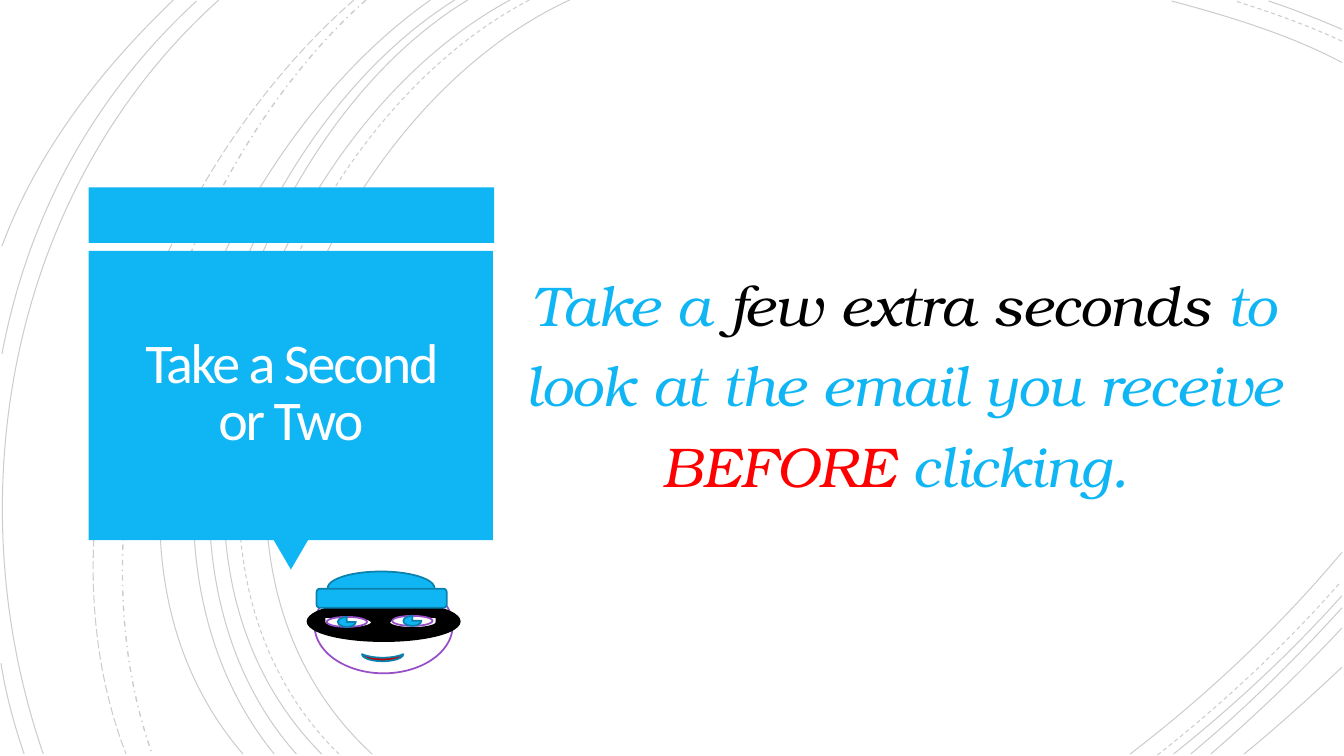
from typing import NamedTuple, Optional

from lxml.etree import SubElement
from pptx import Presentation
from pptx.dml.color import RGBColor
from pptx.enum.dml import MSO_LINE_DASH_STYLE as Dash
from pptx.enum.shapes import MSO_SHAPE as Preset
from pptx.enum.text import MSO_ANCHOR as Anchor, PP_ALIGN as Align
from pptx.oxml.ns import qn
from pptx.util import Cm, Length, Pt

BLUE, DARK_BLUE, PURPLE = "10B6F4", "0B81AD", "984EC7"
BLACK, WHITE, RED = "000000", "FFFFFF", "FF0000"


class Arc(NamedTuple):
    """A cubic curve: start, two control points and end, in inches."""
    points: tuple[float, ...]
    dash: Dash = Dash.SOLID
    weight: float = 0.75


class Part(NamedTuple):
    preset: Preset
    box: tuple[float, float, float, float]
    fill: str
    outline: Optional[str] = None
    rotation: float = 0
    mirrored: bool = False


class Phrase(NamedTuple):
    text: str
    colour: str


ARCS = [
    Arc((5.65, 0, 3.15, 1.15, 1.43, 5.4, 3.69, 7.48)),
    Arc((13.31, 0.62, 12.78, 0.34, 12.18, 0.16, 11.62, 0.01)),
    Arc((11.21, 7.48, 11.97, 6.9, 12.69, 6.22, 13.31, 5.48)),
    Arc((5.25, 0, 2.85, 1.25, 1.23, 5.37, 3.36, 7.48), Dash.DASH),
    Arc((13.31, 0.41, 12.97, 0.25, 12.6, 0.12, 12.25, 0.01), Dash.DASH),
    Arc((11.48, 7.49, 12.13, 6.98, 12.75, 6.4, 13.3, 5.77), Dash.DASH),
    Arc((5.06, 0, 2.7, 1.27, 1.1, 5.37, 3.19, 7.48)),
    Arc((13.31, 0.29, 13.07, 0.19, 12.83, 0.09, 12.58, 0.01)),
    Arc((11.64, 7.48, 12.23, 7.01, 12.8, 6.48, 13.31, 5.91)),
    Arc((4.64, 0, 2.44, 1.33, 1.1, 5.41, 2.94, 7.48)),
    Arc((11.81, 7.48, 12.34, 7.04, 12.84, 6.55, 13.31, 6.03)),
    Arc((4.51, 0, 2.31, 1.38, 0.97, 5.33, 2.72, 7.48)),
    Arc((12.01, 7.48, 12.46, 7.09, 12.9, 6.67, 13.31, 6.23)),
    Arc((4.27, 0, 2.17, 1.47, 0.53, 5.29, 2.41, 7.48)),
    Arc((12.34, 7.48, 12.67, 7.21, 12.99, 6.92, 13.31, 6.62)),
    Arc((3.63, 0, 1.76, 1.66, 0.65, 5.09, 1.51, 7.48), Dash.DASH_DOT, 1),
    Arc((3.51, 0, 1.57, 1.69, 0.29, 4.99, 1.25, 7.48), Dash.LONG_DASH),
    Arc((2.17, 0, 0.11, 1.85, -0.46, 4.9, 0.43, 7.48)),
    Arc((1.95, 0.01, 0.92, 0.96, 0.28, 2.14, 0.02, 3.51)),
    Arc((0.01, 6.58, 0.06, 6.89, 0.14, 7.19, 0.24, 7.48)),
    Arc((1.72, 0, 1, 0.69, 0.37, 1.5, 0.02, 2.44)),
]

CALLOUT = [
    Part(Preset.RECTANGLE, (0.88, 1.86, 4.02, 0.55), BLUE),
    Part(Preset.ISOSCELES_TRIANGLE, (2.71, 5.35, 0.35, 0.3), BLUE, rotation=180),
    Part(Preset.RECTANGLE, (0.88, 2.49, 4.01, 2.87), BLUE),
]

THIEF = [
    Part(Preset.OVAL, (3.12, 5.73, 1.37, 0.95), WHITE, PURPLE),
    Part(Preset.OVAL, (3.05, 5.97, 1.51, 0.39), BLACK, BLACK),
    Part(Preset.TEAR, (3.86, 6.12, 0.47, 0.11), WHITE, BLACK),
    Part(Preset.TEAR, (3.22, 6.12, 0.47, 0.11), WHITE, BLACK, mirrored=True),
    Part(Preset.OVAL, (3.25, 5.67, 1.06, 0.33), BLUE, DARK_BLUE),
    Part(Preset.ROUNDED_RECTANGLE, (3.14, 5.84, 1.29, 0.19), BLUE, DARK_BLUE),
    Part(Preset.MOON, (3.76, 6.32, 0.07, 0.41), "C00000", DARK_BLUE, rotation=270),
]
for eye_left, eye_top in ((3.24, 6.12), (3.89, 6.11)):
    THIEF += [
        Part(Preset.OVAL, (eye_left, eye_top, 0.4, 0.1), WHITE, PURPLE),
        Part(Preset.PIE, (eye_left + 0.11, eye_top, 0.18, 0.1), BLUE, DARK_BLUE),
    ]

TITLE = [Phrase("Take a Second or Two", "FFFEFF")]
ADVICE = [
    Phrase("Take a ", BLUE),
    Phrase("few extra seconds ", BLACK),
    Phrase("to look at the email you receive ", BLUE),
    Phrase("BEFORE", RED),
    Phrase(" clicking. ", BLUE),
]


def inches(value: float) -> Length:
    return Cm(value * 2.54)


def paint(target, colour: str) -> None:
    """Colour a fill, or the fill of a line."""
    target.solid()
    target.fore_color.rgb = RGBColor.from_string(colour)


def draw_arc(slide, arc: Arc) -> None:
    """Lay out the control polygon, then turn its three legs into one curve."""
    lengths = [inches(value) for value in arc.points]
    start, *others = zip(lengths[::2], lengths[1::2])
    builder = slide.shapes.build_freeform(*start)
    builder.add_line_segments(others, close=False)
    curve = builder.convert_to_shape()
    legs = list(curve._element.iter(qn("a:lnTo")))
    outline = legs[0].getparent()
    bezier = SubElement(outline, qn("a:cubicBezTo"))
    for leg in legs:
        bezier.append(leg[0])
        outline.remove(leg)

    curve.shadow.inherit = False
    curve.fill.background()
    paint(curve.line.fill, BLACK)
    curve.line.width = Pt(arc.weight)
    curve.line.dash_style = arc.dash
    ink = next(curve.line._ln.iter(qn("a:srgbClr")))
    SubElement(ink, qn("a:alpha"), val="20000")


def draw_part(slide, part: Part) -> None:
    shape = slide.shapes.add_shape(part.preset, *map(inches, part.box))
    shape.shadow.inherit = False
    shape.rotation = part.rotation
    paint(shape.fill, part.fill)
    if part.outline:
        paint(shape.line.fill, part.outline)
        shape.line.width = Pt(1.25)
    else:
        shape.line.fill.background()
    if part.mirrored:
        shape._element.spPr.find(qn("a:xfrm")).set("flipH", "1")


def write(slide, box: tuple[float, ...], phrases: list[Phrase], font: str,
          spacing: float, italic: bool = False):
    """Add a centred paragraph of coloured phrases and return its text frame."""
    frame = slide.shapes.add_textbox(*map(inches, box)).text_frame
    frame.word_wrap = True
    frame.vertical_anchor = Anchor.MIDDLE
    paragraph = frame.paragraphs[0]
    paragraph.alignment = Align.CENTER
    paragraph.line_spacing = spacing
    for phrase in phrases:
        run = paragraph.add_run()
        run.text = phrase.text
        run.font.name = font
        run.font.size = Pt(40)
        run.font.italic = italic
        paint(run.font.fill, phrase.colour)
    return frame


def main() -> None:
    deck = Presentation()
    deck.slide_width, deck.slide_height = inches(13.33), inches(7.5)
    slide = deck.slides.add_slide(deck.slide_layouts[6])
    for arc in ARCS:
        draw_arc(slide, arc)
    for part in CALLOUT:
        draw_part(slide, part)

    title = write(slide, (0.97, 2.57, 3.83, 2.69), TITLE, "Calibri", 0.85)
    title.margin_left = title.margin_right = inches(0.25)
    title.margin_top = title.margin_bottom = inches(0.25)
    title.paragraphs[0].runs[0].font._element.set("spc", "-150")

    advice = write(slide, (5.11, 0.65, 7.71, 6.19), ADVICE, "TeX Gyre Bonum", 1.2, True)
    advice.paragraphs[0].space_before = Pt(10)

    for part in THIEF:
        draw_part(slide, part)
    deck.save("out.pptx")


if __name__ == "__main__":
    main()
